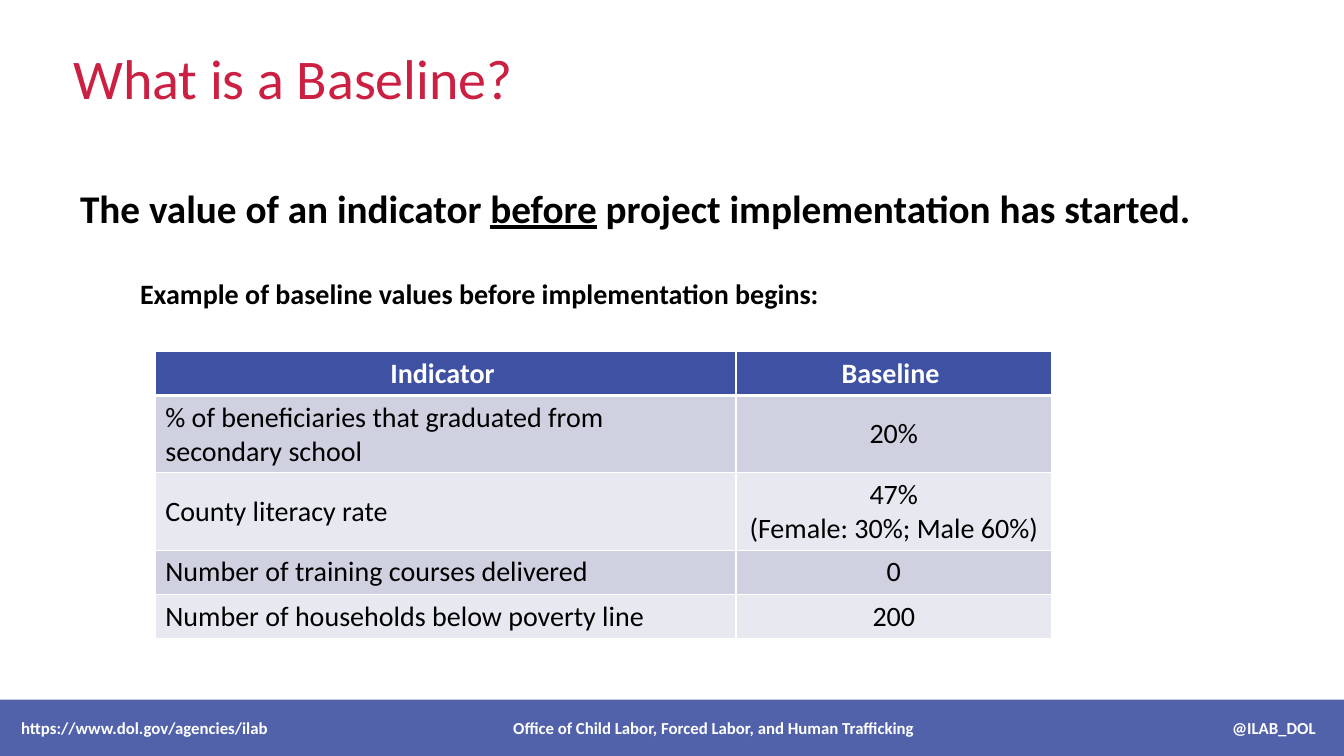
from lxml import etree
from pptx import Presentation
from pptx.dml.color import RGBColor
from pptx.enum.shapes import MSO_SHAPE
from pptx.enum.text import MSO_ANCHOR, PP_ALIGN
from pptx.oxml.ns import qn
from pptx.util import Inches, Pt

LEFT, CENTER = PP_ALIGN.LEFT, PP_ALIGN.CENTER
TOP, MIDDLE, BOTTOM = MSO_ANCHOR.TOP, MSO_ANCHOR.MIDDLE, MSO_ANCHOR.BOTTOM
RECTANGLE = MSO_SHAPE.RECTANGLE

COLORS = {
    "title": "CB2042",
    "text": "000000",
    "white": "FFFFFF",
    "blue": "3F51A2",
    "band_dark": "CFD0E0",
    "band_light": "E8E9F0",
}

HEADER = ("Indicator ", "Baseline ")
BASELINES = [
    ("% of beneficiaries that graduated from secondary school", "20%"),
    ("County literacy rate", "47%\n(Female: 30%; Male 60%)"),
    ("Number of training courses delivered", "0"),
    ("Number of households below poverty line", "200"),
]
COLUMN_WIDTHS = (5.76, 3.13)
ROW_HEIGHTS = (0.43, 0.76, 0.76, 0.44, 0.44)
FOOTER = (
    "https://www.dol.gov/agencies/ilab",
    "Office of Child Labor, Forced Labor, and Human Trafficking",
    "@ILAB_DOL",
)


class SlideBuilder:
    font_name = "Calibri"

    def __init__(self, slide):
        self.slide = slide

    def color(self, name):
        return RGBColor.from_string(COLORS[name])

    def style(self, paragraph, size, color, bold=False, align=LEFT):
        paragraph.alignment = align
        font = paragraph.font
        font.name, font.size, font.bold = self.font_name, Pt(size), bold
        font.color.rgb = self.color(color)

    def text(self, box, runs, size, color, bold=False, align=LEFT,
             anchor=TOP, spacing=1.0):
        """Add a one-paragraph text box; runs are (words, underlined) pairs."""
        frame = self.slide.shapes.add_textbox(*map(Inches, box)).text_frame
        frame.word_wrap = True
        frame.vertical_anchor = anchor
        paragraph = frame.paragraphs[0]
        paragraph.line_spacing = spacing
        for words, underlined in runs:
            run = paragraph.add_run()
            run.text = words
            if underlined:
                run.font.underline = True
        self.style(paragraph, size, color, bold, align)

    def borders(self, cell, bottom_width):
        properties = cell._tc.get_or_add_tcPr()
        for side, width in (("L", 1), ("R", 1), ("T", 1), ("B", bottom_width)):
            line = etree.SubElement(properties, qn(f"a:ln{side}"), w=str(Pt(width)))
            fill = etree.SubElement(line, qn("a:solidFill"))
            etree.SubElement(fill, qn("a:srgbClr"), val=COLORS["white"])

    def cell(self, cell, words, fill, color, bold, align, anchor, bottom_width):
        cell.text = words
        cell.vertical_anchor = anchor
        for paragraph in cell.text_frame.paragraphs:
            self.style(paragraph, 20, color, bold, align)
        self.borders(cell, bottom_width)
        cell.fill.solid()
        cell.fill.fore_color.rgb = self.color(fill)

    def table(self, left, top, header, rows, widths, heights):
        table = self.slide.shapes.add_table(
            len(heights), len(widths), Inches(left), Inches(top),
            Inches(sum(widths)), Inches(sum(heights))).table
        for column, width in zip(table.columns, widths):
            column.width = Inches(width)
        for row, height in zip(table.rows, heights):
            row.height = Inches(height)
        for c, words in enumerate(header):
            self.cell(table.cell(0, c), words, "blue", "white", True, CENTER, TOP, 3)
        for r, values in enumerate(rows, start=1):
            band = "band_dark" if r % 2 else "band_light"
            for c, words in enumerate(values):
                self.cell(table.cell(r, c), words, band, "text", False,
                          CENTER if c else LEFT, MIDDLE, 1)

    def footer(self, box, parts, inset, tabs):
        """Add a translucent bar whose parts are spread by (inches, kind) tab stops."""
        bar = self.slide.shapes.add_shape(RECTANGLE, *map(Inches, box))
        bar.shadow.inherit = False
        bar.line.fill.background()
        bar.fill.solid()
        bar.fill.fore_color.rgb = self.color("blue")
        shade = bar.fill._xPr.find(qn("a:solidFill"))[0]
        etree.SubElement(shade, qn("a:alpha"), val="90000")

        frame = bar.text_frame
        frame.word_wrap = True
        frame.margin_left = Inches(inset)
        frame.vertical_anchor = MIDDLE
        paragraph = frame.paragraphs[0]
        paragraph.add_run().text = "\t".join(parts)
        self.style(paragraph, 12, "white", True)
        stops = etree.Element(qn("a:tabLst"))
        for position, kind in tabs:
            etree.SubElement(stops, qn("a:tab"), pos=str(Inches(position)), algn=kind)
        paragraph._p.get_or_add_pPr().find(qn("a:defRPr")).addprevious(stops)


def main():
    deck = Presentation()
    deck.slide_width, deck.slide_height = Inches(13.33), Inches(7.5)
    builder = SlideBuilder(deck.slides.add_slide(deck.slide_layouts[6]))

    builder.text((0.63, 0.11, 11.24, 1.05), [("What is a Baseline?", False)],
                 40, "title", anchor=BOTTOM, spacing=0.9)
    definition = [("The value of an indicator ", False), ("before", True),
                  (" project implementation has started.", False)]
    builder.text((0.52, 1.83, 11.56, 0.79), definition, 28, "text",
                 bold=True, align=CENTER, spacing=0.9)
    builder.text((1.29, 2.69, 9.38, 0.44),
                 [("Example of baseline values before implementation begins:", False)],
                 20, "text", bold=True)
    builder.table(1.54, 3.49, HEADER, BASELINES, COLUMN_WIDTHS, ROW_HEIGHTS)
    builder.footer((0, 6.94, 13.37, 0.56), FOOTER, 0.21,
                   ((6.87, "ctr"), (12.84, "r")))

    deck.save("out.pptx")


if __name__ == "__main__":
    main()
